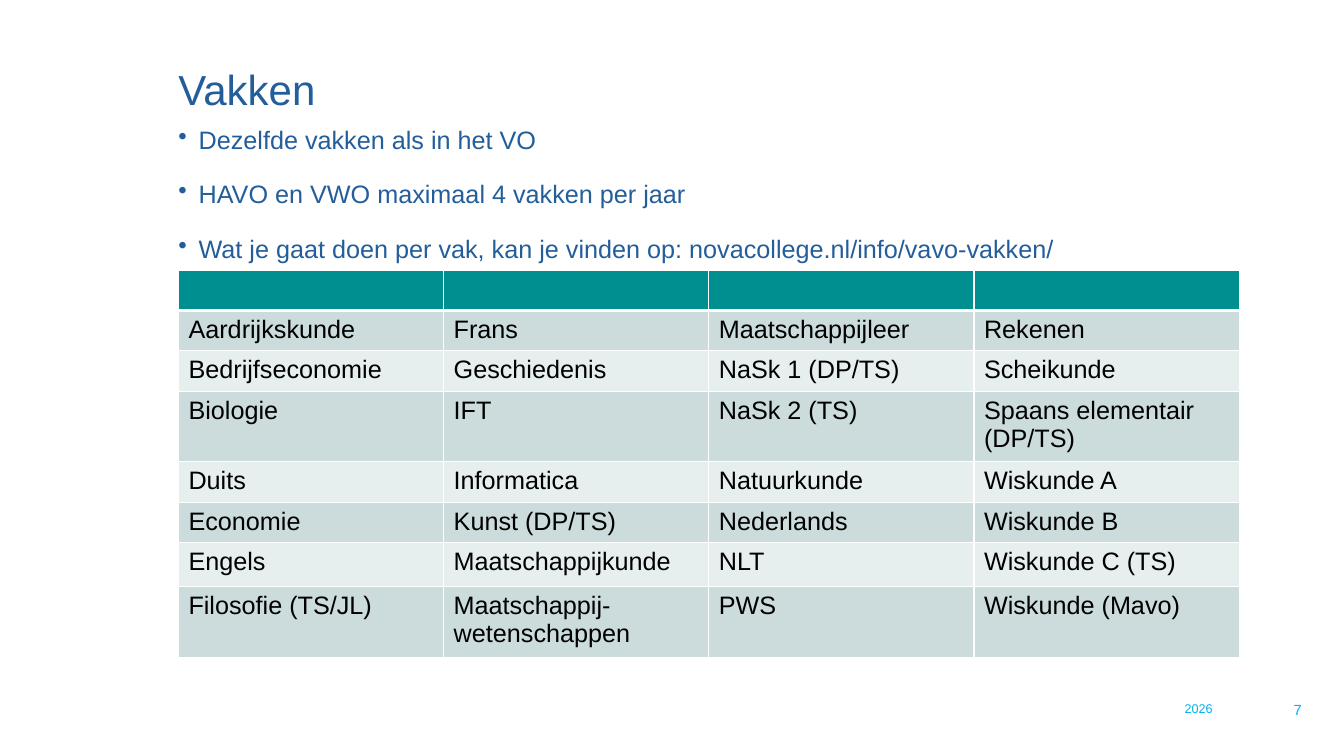
from dataclasses import dataclass

from lxml import etree
from pptx import Presentation
from pptx.dml.color import RGBColor
from pptx.enum import shapes, text
from pptx.oxml import ns
from pptx.util import Inches, Pt

# Content
TITLE = "Vakken"
POINTS = [
    "Dezelfde vakken als in het VO",
    "HAVO en VWO maximaal 4 vakken per jaar",
    "Wat je gaat doen per vak, kan je vinden op: novacollege.nl/info/vavo-vakken/",
]
SUBJECTS = [
    ("", "", "", ""),
    ("Aardrijkskunde", "Frans", "Maatschappijleer", "Rekenen"),
    ("Bedrijfseconomie", "Geschiedenis", "NaSk 1 (DP/TS)", "Scheikunde"),
    ("Biologie", "IFT", "NaSk 2 (TS)", "Spaans elementair (DP/TS)"),
    ("Duits", "Informatica", "Natuurkunde", "Wiskunde A"),
    ("Economie", "Kunst (DP/TS)", "Nederlands", "Wiskunde B"),
    ("Engels", "Maatschappijkunde", "NLT", "Wiskunde C (TS)"),
    ("Filosofie (TS/JL)", "Maatschappij- wetenschappen", "PWS", "Wiskunde (Mavo)"),
]
YEAR = "2026"
PAGE = "7"


@dataclass(frozen=True)
class Theme:
    font: str = "Arial"
    blue: str = "235E9B"
    page_blue: str = "00AEEF"
    year_blue: str = "00B0F0"
    black: str = "000000"
    white: str = "FFFFFF"
    header: str = "008F91"
    bands: tuple = ("E7EEEE", "CCDBDC")
    title_size: float = 30
    body_size: float = 18
    page_size: float = 10.5
    year_size: float = 9


THEME = Theme()

# Layout in inches
LEFT = 1.77
TEXT_WIDTH = 9.88
COLUMN_WIDTH = 2.63
ROW_HEIGHT = 0.4
ENGELS_ROW, ENGELS_HEIGHT = 6, 0.44


def style(paragraph, size, color):
    paragraph.font.name = THEME.font
    paragraph.font.size = Pt(size)
    paragraph.font.color.rgb = RGBColor.from_string(color)


def add_text(slide, box, lines, size, color, anchor):
    frame = slide.shapes.add_textbox(*map(Inches, box)).text_frame
    frame.word_wrap = True
    frame.vertical_anchor = anchor
    frame.margin_left = frame.margin_top = frame.margin_right = frame.margin_bottom = 0
    frame.text = "\n".join(lines)
    for paragraph in frame.paragraphs:
        style(paragraph, size, color)
    return frame.paragraphs


def add_bullet(paragraph):
    props = paragraph._p.get_or_add_pPr()
    props.set("marL", str(Inches(0.2)))
    props.set("indent", str(Inches(-0.2)))
    bullet = etree.Element(ns.qn("a:buChar"), char="•")
    props.insert_element_before(bullet, "a:tabLst", "a:defRPr", "a:extLst")


def add_borders(cell, widths):
    props = cell._tc.get_or_add_tcPr()
    for place, (side, width) in enumerate(widths.items()):
        line = etree.Element(ns.qn(f"a:ln{side}"), w=str(Pt(width)))
        fill = etree.SubElement(line, ns.qn("a:solidFill"))
        etree.SubElement(fill, ns.qn("a:srgbClr"), val=THEME.white)
        props.insert(place, line)


def add_subjects(slide):
    rows, columns = len(SUBJECTS), len(SUBJECTS[0])
    table = slide.shapes.add_table(
        rows, columns, Inches(LEFT), Inches(2.68),
        Inches(columns * COLUMN_WIDTH), Inches(rows * ROW_HEIGHT)).table
    for column in table.columns:
        column.width = Inches(COLUMN_WIDTH)
    table.rows[ENGELS_ROW].height = Inches(ENGELS_HEIGHT)
    for r, subjects in enumerate(SUBJECTS):
        fill = THEME.bands[r % 2] if r else THEME.header
        borders = {"L": 1, "R": 1, "B": 1} if r else {"L": 1, "R": 1, "T": 1, "B": 3}
        for c, subject in enumerate(subjects):
            cell = table.cell(r, c)
            cell.text = subject
            style(cell.text_frame.paragraphs[0], THEME.body_size, THEME.black)
            cell.fill.solid()
            cell.fill.fore_color.rgb = RGBColor.from_string(fill)
            add_borders(cell, borders)


def add_year(slide):
    year = slide.shapes.add_shape(
        shapes.MSO_SHAPE.RECTANGLE, *map(Inches, (11.65, 6.9, 0.85, 0.25)))
    year.shadow.inherit = False
    year.fill.solid()
    year.fill.fore_color.rgb = RGBColor.from_string(THEME.white)
    year.line.fill.background()
    year.text_frame.text = YEAR
    paragraph = year.text_frame.paragraphs[0]
    paragraph.alignment = text.PP_ALIGN.LEFT
    style(paragraph, THEME.year_size, THEME.year_blue)


def main():
    deck = Presentation()
    deck.slide_width, deck.slide_height = Inches(13.33), Inches(7.5)
    slide = deck.slides.add_slide(deck.slide_layouts[6])

    # Title and points
    add_text(slide, (LEFT, 0.58, TEXT_WIDTH, 0.59), [TITLE],
             THEME.title_size, THEME.blue, text.MSO_ANCHOR.MIDDLE)
    points = add_text(slide, (LEFT, 1.17, TEXT_WIDTH, 6.08), POINTS,
                      THEME.body_size, THEME.blue, text.MSO_ANCHOR.TOP)
    for i, point in enumerate(points):
        add_bullet(point)
        point.line_spacing = Pt(26)
        if i:
            point.space_before = Pt(13)

    # Subject table
    add_subjects(slide)

    # Footer
    page = add_text(slide, (12.37, 6.97, 0.54, 0.16), [PAGE],
                    THEME.page_size, THEME.page_blue, text.MSO_ANCHOR.BOTTOM)
    page[0].alignment = text.PP_ALIGN.RIGHT
    add_year(slide)

    deck.save("out.pptx")


if __name__ == "__main__":
    main()
